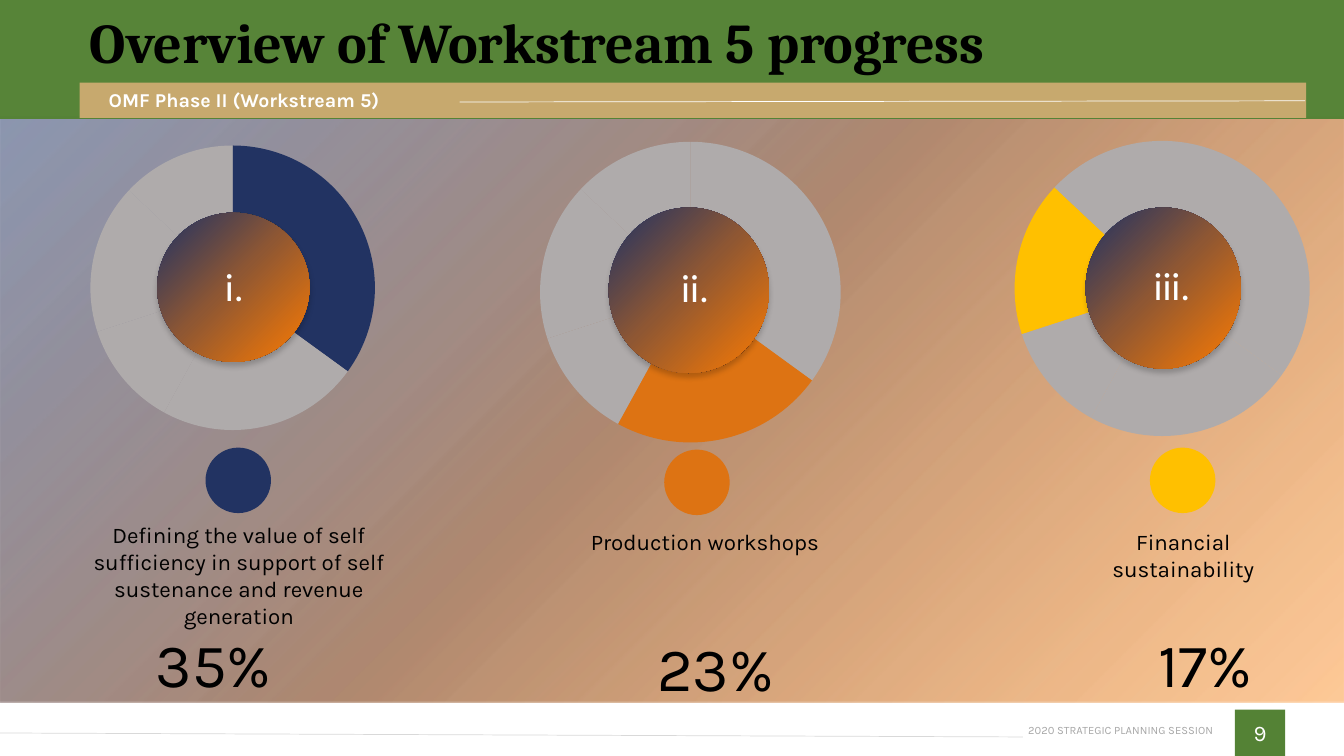
from lxml import etree
from pptx import Presentation
from pptx.chart.data import CategoryChartData
from pptx.dml.color import RGBColor
from pptx.enum.chart import XL_CHART_TYPE
from pptx.enum.shapes import MSO_CONNECTOR, MSO_SHAPE
from pptx.enum.text import MSO_ANCHOR, PP_ALIGN
from pptx.oxml import parse_xml
from pptx.oxml.ns import nsdecls, qn
from pptx.util import Cm, Pt

RECT, OVAL = MSO_SHAPE.RECTANGLE, MSO_SHAPE.OVAL
STRAIGHT = MSO_CONNECTOR.STRAIGHT
RING = XL_CHART_TYPE.DOUGHNUT
LEFT, MID, RIGHT = PP_ALIGN.LEFT, PP_ALIGN.CENTER, PP_ALIGN.RIGHT
TOP, CENTRE = MSO_ANCHOR.TOP, MSO_ANCHOR.MIDDLE

GREEN, TAN, GREY = "548235", "C7A96E", "AFABAB"
WHITE, BLACK = "FFFFFF", "000000"
WIDE, HIGH = 33.87, 19.05
SHARES = [35, 23, 12, 17, 13]

# Text formats
HEAD = {"name": "Cambria", "size": Pt(40), "bold": True, "color": BLACK}
SUB = {"name": "Karla", "size": Pt(14), "bold": True, "color": WHITE}
LABEL = {"name": "Karla", "size": Pt(16), "color": BLACK}
SHARE = {"name": "Karla", "size": Pt(44), "color": BLACK}
MARK = {"name": "Calibri", "size": Pt(28), "color": WHITE}
FOOT = {"name": "Karla", "size": Pt(8), "color": "A6A6A6"}
PAGE = {"name": "Karla", "size": Pt(16), "color": WHITE}
CHART = {"name": "Calibri", "size": Pt(10), "color": BLACK}

# One entry per theme; boxes are left, top, width, height in cm
THEMES = [
    {"mark": "i.", "text": "Defining the value of self sufficiency in support of "
                           "self sustenance and revenue generation",
     "slice": 0, "hue": "223362",
     "ring": (1.78, 3.1), "plot": (0.065, 0.032, 0.935, 0.903),
     "hub": (3.96, 5.36, 3.84, 3.76), "sign": (5.08, 6.48, 1.65, 1.45),
     "dot": (5.18, 11.28), "label": (2.26, 13.13, 7.52, 2.74),
     "share": (3.25, 15.65)},
    {"mark": "ii.", "text": "Production workshops",
     "slice": 1, "hue": "DD7313",
     "ring": (13.61, 2.97), "plot": (0, 0.06, 0.988, 0.903),
     "hub": (15.34, 5.23, 4.04, 4.17), "sign": (16.18, 6.5, 2.67, 2.41),
     "dot": (16.74, 11.33), "label": (14.55, 13.31, 6.43, 0.69),
     "share": (15.9, 15.75)},
    {"mark": "iii.", "text": "Financial sustainability",
     "slice": 3, "hue": "FFC000",
     "ring": (25.45, 2.95), "plot": (0.008, 0.07, 0.985, 0.866),
     "hub": (27.36, 5.23, 3.91, 4.06), "sign": (28.24, 6.45, 2.59, 2.36),
     "dot": (28.98, 11.28), "label": (27.84, 13.31, 3.96, 1.37),
     "share": (28.24, 15.65)},
]


def rgb(code):
    return RGBColor.from_string(code)


def place(box):
    return [Cm(n) for n in box]


def style(font, form):
    for key, value in form.items():
        if key == "color":
            font.color.rgb = rgb(value)
        else:
            setattr(font, key, value)


def write(frame, text, form, align=LEFT, anchor=TOP, inset=None):
    frame.word_wrap = True
    frame.vertical_anchor = anchor
    if inset is not None:
        for side in ("left", "top", "right", "bottom"):
            setattr(frame, f"margin_{side}", Cm(inset))
    para = frame.paragraphs[0]
    para.alignment = align
    run = para.add_run()
    run.text = text
    style(run.font, form)
    return para


def add_text(slide, box, *args, **more):
    return write(slide.shapes.add_textbox(*place(box)).text_frame, *args, **more)


def add_block(slide, kind, box, fill, alpha=100):
    block = slide.shapes.add_shape(kind, *place(box))
    block.shadow.inherit = False
    block.line.fill.background()
    block.fill.solid()
    block.fill.fore_color.rgb = rgb(fill)
    if alpha < 100:
        tint = block.element.spPr.find(qn("a:solidFill"))[0]
        etree.SubElement(tint, qn("a:alpha"), val=str(alpha * 1000))
    return block


def blend(block, alphas=(100, 100, 100)):
    """Fill with a glow that spreads from the lower right corner."""
    stops = "".join(
        f'<a:gs pos="{pos * 1000}"><a:srgbClr val="{hue}">'
        f'<a:alpha val="{alpha * 1000}"/></a:srgbClr></a:gs>'
        for pos, hue, alpha in zip((0, 52, 100), ("FC7B01", "8F5733", "1D3164"), alphas))
    props = block.element.spPr
    props.replace(props.find(qn("a:solidFill")), parse_xml(
        f'<a:gradFill {nsdecls("a")} rotWithShape="1"><a:gsLst>{stops}</a:gsLst>'
        '<a:path path="circle"><a:fillToRect l="100000" t="100000"/></a:path>'
        '<a:tileRect r="-100000" b="-100000"/></a:gradFill>'))


def add_shade(block):
    cast = parse_xml(
        f'<a:outerShdw {nsdecls("a")} blurRad="50800" dist="38100" dir="5400000" '
        'algn="t" rotWithShape="0"><a:srgbClr val="000000"><a:alpha val="20000"/>'
        '</a:srgbClr></a:outerShdw>')
    block.element.spPr.find(qn("a:effectLst")).append(cast)


def add_rule(slide, ends, hue):
    rule = slide.shapes.add_connector(STRAIGHT, *place(ends))
    rule.line.color.rgb = rgb(hue)
    rule.line.width = Pt(0.5)
    etree.SubElement(rule.element.spPr, qn("a:effectLst"))


def add_ring(slide, theme):
    data = CategoryChartData()
    data.categories = [str(n + 1) for n in range(len(SHARES))]
    data.add_series("Series 1", SHARES)
    box = place((*theme["ring"], 7.67, 8.59))
    chart = slide.shapes.add_chart(RING, *box, data).chart
    chart.has_legend = chart.has_title = False
    style(chart.font, CHART)
    plot = chart.plots[0]
    plot.vary_by_categories = False
    for n in range(len(SHARES)):
        part = plot.series[0].points[n].format
        part.fill.solid()
        part.fill.fore_color.rgb = rgb(theme["hue"] if n == theme["slice"] else GREY)
        part.line.fill.background()

    # Hole size and inner plot area
    area = chart.element.find(f'.//{qn("c:plotArea")}')
    area.find(f'.//{qn("c:holeSize")}').set("val", "54")
    for old in area.findall(qn("c:layout")):
        area.remove(old)
    sizes = "".join(f'<c:{key} val="{n}"/>' for key, n in zip("xywh", theme["plot"]))
    area.insert(0, parse_xml(
        f'<c:layout {nsdecls("c")}><c:manualLayout><c:layoutTarget val="inner"/>'
        f'<c:xMode val="edge"/><c:yMode val="edge"/>{sizes}'
        '</c:manualLayout></c:layout>'))


def add_theme(slide, theme):
    add_block(slide, OVAL, (*theme["dot"], 1.65, 1.65), theme["hue"])
    add_text(slide, theme["label"], theme["text"], LABEL, MID, inset=0)
    add_ring(slide, theme)
    hub = add_block(slide, OVAL, theme["hub"], theme["hue"])
    blend(hub)
    add_shade(hub)
    add_text(slide, theme["sign"], theme["mark"], MARK, MID)
    share = f'{SHARES[theme["slice"]]}%'
    add_text(slide, (*theme["share"], 4.27, 2.13), share, SHARE, MID)


def add_head(slide):
    add_block(slide, RECT, (0, 0, WIDE, 3), GREEN, 98)
    add_block(slide, RECT, (2.01, 2.08, 30.91, 0.89), TAN)
    sub = add_text(slide, (2.74, 2.21, 8.84, 0.61), "OMF Phase II (Workstream 5)",
                   SUB, anchor=CENTRE, inset=0)
    sub.space_after = Pt(3)
    add_rule(slide, (11.58, 2.57, 32.89, 2.54), WHITE)
    title = slide.shapes.title
    title.left, title.top, title.width, title.height = place((2.01, 0, 31.86, 2.29))
    para = write(title.text_frame, "Overview of Workstream 5 progress", HEAD,
                 anchor=CENTRE)
    para.line_spacing = 0.9
    slide.shapes.element.append(title.element)  # bring to front


def add_foot(slide):
    page = add_block(slide, RECT, (31.12, 17.88, 1.27, 1.17), GREEN)
    write(page.text_frame, "9", PAGE, MID, CENTRE)
    add_text(slide, (25.78, 18.24, 4.8, 0.33), "2020 STRATEGIC PLANNING SESSION",
             FOOT, RIGHT, CENTRE, 0)
    add_rule(slide, (25.78, 18.57, 0, 18.47), "D9D9D9")


def main():
    deck = Presentation()
    deck.slide_width, deck.slide_height = place((WIDE, HIGH))
    slide = deck.slides.add_slide(deck.slide_layouts[5])
    add_foot(slide)
    panel = add_block(slide, RECT, (0, 2.95, WIDE, 14.76), TAN)
    blend(panel, (40, 70, 50))
    add_head(slide)
    for theme in THEMES:
        add_theme(slide, theme)
    deck.save("out.pptx")


if __name__ == "__main__":
    main()
